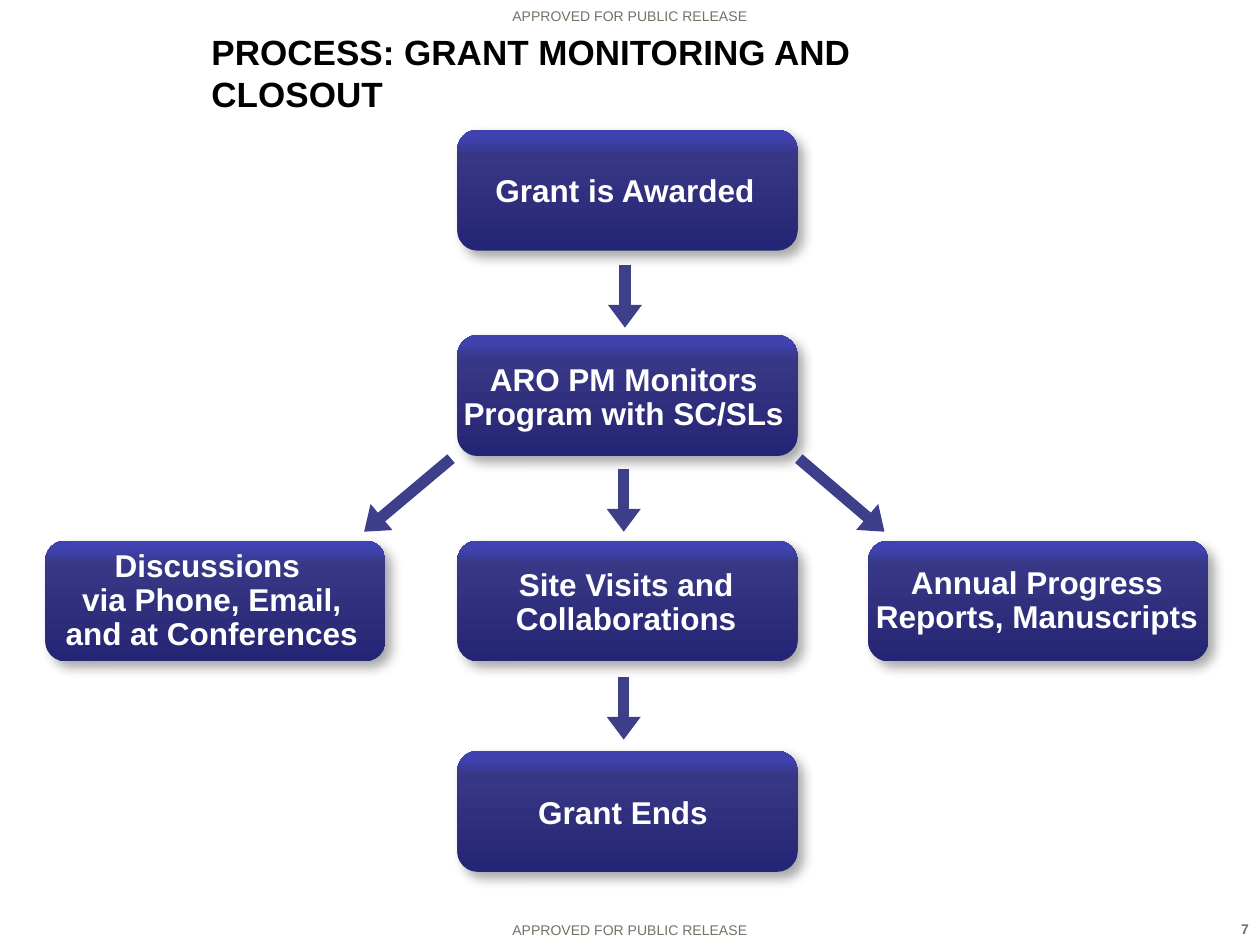
from dataclasses import dataclass

from lxml import etree
from pptx import Presentation
from pptx.dml.color import RGBColor
from pptx.enum.shapes import MSO_CONNECTOR, MSO_SHAPE
from pptx.enum.text import MSO_ANCHOR, PP_ALIGN
from pptx.oxml import parse_xml
from pptx.oxml.ns import nsdecls, qn
from pptx.util import Pt

PX = 9144
LEFT, CENTER, RIGHT = PP_ALIGN.LEFT, PP_ALIGN.CENTER, PP_ALIGN.RIGHT
TOP, MIDDLE, BOTTOM = MSO_ANCHOR.TOP, MSO_ANCHOR.MIDDLE, MSO_ANCHOR.BOTTOM
ROUNDED, STRAIGHT = MSO_SHAPE.ROUNDED_RECTANGLE, MSO_CONNECTOR.STRAIGHT
COLORS = {
    "title": "000000",
    "marking": "717365",
    "step_text": "FFFFFF",
    "arrow": "3D3F8B",
    "shadow": "000000",
    "step_bottom": "252575",
    "step_middle": "373785",
    "step_top": "3F42AF",
}
STEP_STOPS = ((0, "step_bottom"), (80, "step_middle"), (93, "step_top"))
STEP_W, STEP_H = 270, 96
MARKING = "APPROVED FOR PUBLIC RELEASE"


@dataclass(frozen=True)
class Label:
    text: str
    box: tuple[int, int, int, int]
    size: int
    color: str
    bold: bool = True
    align: PP_ALIGN = CENTER
    anchor: MSO_ANCHOR = MIDDLE
    inset: tuple[int, int] = (10, 5)
    spacing: float = 1.0


@dataclass(frozen=True)
class Step:
    x: int
    y: int
    text: str
    text_box: tuple[int, int, int, int]


@dataclass(frozen=True)
class Arrow:
    x1: int
    y1: int
    x2: int
    y2: int


LABELS = [
    Label(MARKING, (150, 726, 700, 24), 8, "marking", False, anchor=BOTTOM),
    Label(MARKING, (0, 0, 1000, 24), 8, "marking", False, anchor=BOTTOM),
    Label("7", (955, 726, 46, 24), 8, "marking", align=RIGHT, anchor=TOP),
    Label("PROCESS: GRANT MONITORING AND CLOSOUT", (158, 30, 650, 55), 20, "title", align=LEFT),
]
STEPS = [
    Step(363, 103, "Grant is Awarded", (365, 116, 262, 73)),
    Step(363, 266, "ARO PM Monitors Program with SC/SLs", (362, 280, 266, 72)),
    Step(36, 429, "Discussions \nvia Phone, Email, and at Conferences", (39, 447, 258, 61)),
    Step(363, 596, "Grant Ends", (373, 619, 243, 55)),
    Step(363, 429, "Site Visits and\nCollaborations", (368, 448, 258, 61)),
    Step(689, 429, "Annual Progress Reports, Manuscripts", (690, 447, 266, 61)),
]
ARROWS = [
    Arrow(496, 210, 496, 260),
    Arrow(495, 372, 495, 422),
    Arrow(495, 537, 495, 587),
    Arrow(358, 364, 289, 422),
    Arrow(634, 364, 702, 422),
]


def emu(*lengths: int) -> list[int]:
    return [n * PX for n in lengths]


def draw_label(s, label: Label) -> None:
    tf = s.shapes.add_textbox(*emu(*label.box)).text_frame
    tf.word_wrap = True
    tf.vertical_anchor = label.anchor
    tf.margin_left = tf.margin_right = label.inset[0] * PX
    tf.margin_top = tf.margin_bottom = label.inset[1] * PX
    p = tf.paragraphs[0]
    p.text = label.text
    p.alignment = label.align
    p.line_spacing = label.spacing
    for r in p.runs:
        r.font.name = "Arial"
        r.font.size = Pt(label.size)
        r.font.bold = label.bold
        r.font.color.rgb = RGBColor.from_string(COLORS[label.color])


def draw_step(s, step: Step) -> None:
    sp = s.shapes.add_shape(ROUNDED, *emu(step.x, step.y, STEP_W, STEP_H))
    sp.line.fill.background()
    sp.shadow.inherit = False
    sp.fill.gradient()
    sp.fill.gradient_angle = 90
    stops = sp._element.spPr.find(qn("a:gradFill")).find(qn("a:gsLst"))
    for stop in list(stops):
        stops.remove(stop)
    for position, color in STEP_STOPS:
        stop = etree.SubElement(stops, qn("a:gs"), pos=str(position * 1000))
        etree.SubElement(stop, qn("a:srgbClr"), val=COLORS[color])
    sp._element.spPr.find(qn("a:effectLst")).append(parse_xml(
        f'<a:outerShdw {nsdecls("a")} blurRad="{Pt(7)}" dist="{Pt(5)}" dir="2700000" '
        f'algn="tl" rotWithShape="0"><a:srgbClr val="{COLORS["shadow"]}">'
        '<a:alpha val="35000"/></a:srgbClr></a:outerShdw>'))
    draw_label(s, Label(step.text, step.text_box, 18, "step_text", inset=(1, 1), spacing=0.9))


def draw_arrow(s, arrow: Arrow) -> None:
    cx = s.shapes.add_connector(STRAIGHT, *emu(arrow.x1, arrow.y1, arrow.x2, arrow.y2))
    cx.line.width = Pt(6.5)
    cx.line.color.rgb = RGBColor.from_string(COLORS["arrow"])
    etree.SubElement(cx.line._get_or_add_ln(), qn("a:tailEnd"), type="triangle", w="med", len="sm")
    etree.SubElement(cx._element.spPr, qn("a:effectLst"))


def main() -> None:
    prs = Presentation()
    prs.slide_width, prs.slide_height = emu(1000, 750)
    s = prs.slides.add_slide(prs.slide_layouts[6])
    for label in LABELS:
        draw_label(s, label)
    for step in STEPS:
        draw_step(s, step)
    for arrow in ARROWS:
        draw_arrow(s, arrow)
    prs.save("out.pptx")


if __name__ == "__main__":
    main()
